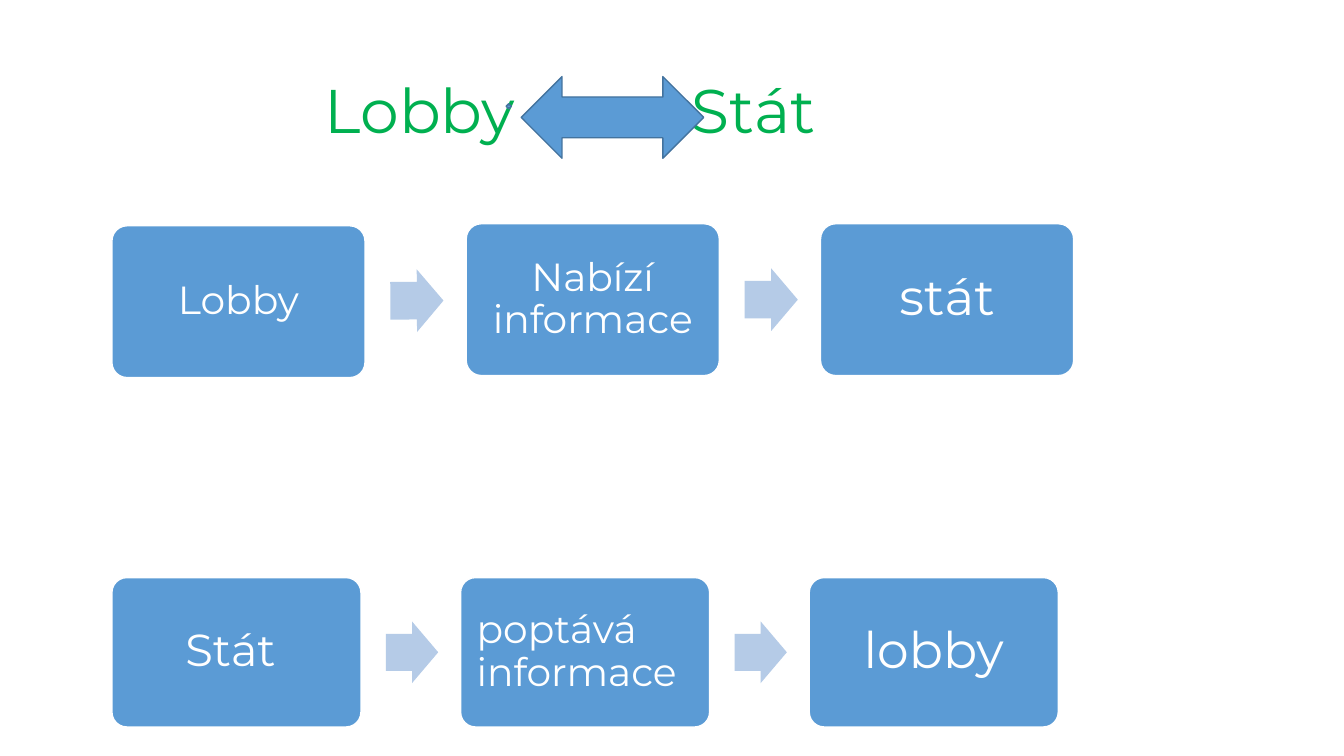
import pptx
import pptx.util
import pptx.dml.color
import pptx.enum.shapes
import pptx.enum.text
from lxml import etree

HUES = {"box": "5B9BD5", "edge": "43739E", "step": "B5CBE7",
        "head": "00B050", "white": "FFFFFF"}
KIND = pptx.enum.shapes.MSO_SHAPE
SIDE = pptx.enum.text.PP_ALIGN


class Deck:
    """Style and current slide; lengths are percent of the slide's size."""

    def __init__(self):
        self.file = pptx.Presentation()
        self.file.slide_width = pptx.util.Inches(13.33)
        self.file.slide_height = pptx.util.Inches(7.5)
        self.page = self.file.slides.add_slide(self.file.slide_layouts[6])
        self.font = "Montserrat"

    def wide(self, part):
        return round(self.file.slide_width * part / 100)

    def area(self, left, top, width, height):
        tall = self.file.slide_height / 100
        return (self.wide(left), round(top * tall),
                self.wide(width), round(height * tall))

    def hue(self, name):
        return pptx.dml.color.RGBColor.from_string(HUES[name])

    def shape(self, kind, area, fill, line=None, adj=()):
        item = self.page.shapes.add_shape(kind, *self.area(*area))
        item.shadow.inherit = False
        item.fill.solid()
        item.fill.fore_color.rgb = self.hue(fill)
        if line:
            item.line.color.rgb = self.hue(line)
            item.line.width = pptx.util.Pt(1)
        else:
            item.line.fill.background()
        for spot, size in enumerate(adj):
            item.adjustments[spot] = size
        return item

    def label(self, item, text, size, hue, align, inset):
        frame = item.text_frame
        frame.word_wrap = True
        frame.vertical_anchor = pptx.enum.text.MSO_ANCHOR.MIDDLE
        frame.margin_left = frame.margin_right = inset
        frame.margin_top = frame.margin_bottom = inset
        para = frame.paragraphs[0]
        para.alignment = align
        para.line_spacing = 0.9
        run = para.add_run()
        run.text = text
        run.font.name = self.font
        run.font.size = pptx.util.Pt(size)
        run.font.color.rgb = self.hue(hue)
        return para

    def title(self, text, area, stop):
        item = self.page.shapes.add_textbox(*self.area(*area))
        para = self.label(item, text, 44, "head", SIDE.LEFT, 0)
        # Tab stop that leaves room for the double arrow
        props = para._p.get_or_add_pPr()
        space = "{http://schemas.openxmlformats.org/drawingml/2006/main}"
        tabs = etree.SubElement(props, space + "tabLst")
        etree.SubElement(tabs, space + "tab",
                         pos=str(self.wide(stop)), algn="l")

    def box(self, area, text, size, align):
        item = self.shape(KIND.ROUNDED_RECTANGLE, area, "box", "white", [0.1])
        self.label(item, text, size, "white", align,
                   pptx.util.Inches(size / 240))

    def step(self, area, tilt):
        item = self.shape(KIND.RIGHT_ARROW, area, "step", adj=[0.6, 0.5])
        item.rotation = tilt

    def chain(self, left, top, width, words, drop=0):
        """Boxes 1.4 widths apart with arrows between; drop lowers the first."""
        high = width * 16 / 15
        for spot, (text, size, align) in enumerate(words):
            here = left + spot * width * 1.4
            fall = 0 if spot else drop
            self.box((here, top + fall, width, high), text, size, align)
            if spot < len(words) - 1:
                tall = width * 0.44
                self.step((here + width * 1.1, top + (high + fall - tall) / 2,
                           width * 0.21, tall), -fall)

    def swap(self, area):
        self.shape(KIND.LEFT_RIGHT_ARROW, area, "box", "edge")


def main():
    deck = Deck()
    # Title
    deck.title("Lobby\tStát", (24.16, 5.33, 38, 19.33), 27.3)
    # Lobby offers information to the state
    deck.chain(8.33, 29.6, 18.83, [("Lobby", 28, SIDE.CENTER),
                                   ("Nabízí informace", 28, SIDE.CENTER),
                                   ("stát", 36, SIDE.CENTER)], 0.27)
    # State asks the lobby for information
    deck.chain(8.33, 76.4, 18.53, [("Stát ", 32, SIDE.CENTER),
                                   ("poptává informace", 28, SIDE.LEFT),
                                   ("lobby", 36, SIDE.CENTER)])
    # Double arrows in the title
    deck.swap((37.66, 13.73, 0.38, 0.67))
    deck.swap((38.78, 10.13, 13.58, 10.8))
    deck.file.save("out.pptx")


if __name__ == "__main__":
    main()
